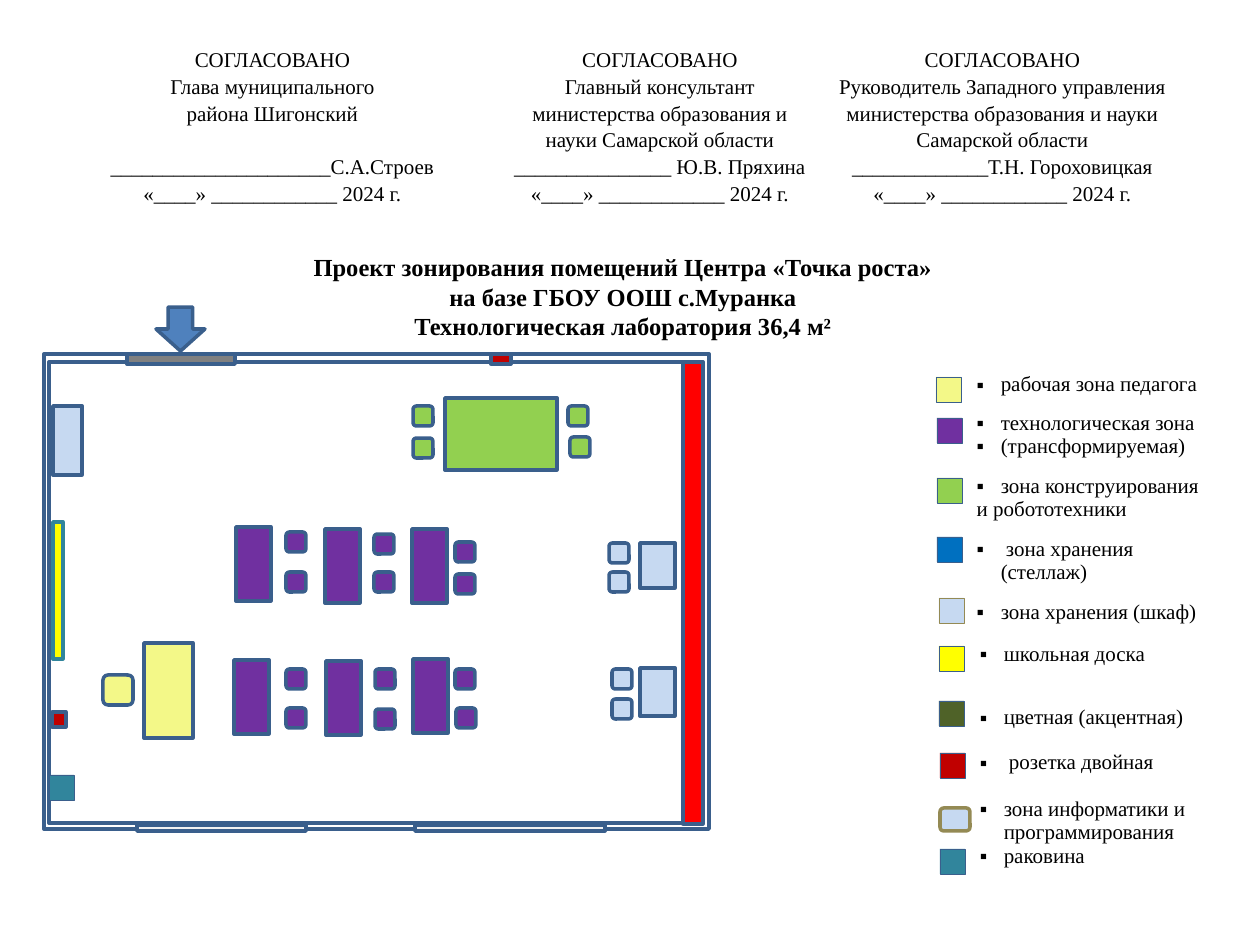
from dataclasses import dataclass
from itertools import accumulate
from typing import Optional

from lxml import etree
from pptx import Presentation
from pptx import util as u
from pptx.dml.color import RGBColor
from pptx.enum import shapes, text
from pptx.oxml import ns

PX_PER_INCH = 126
RECT = shapes.MSO_SHAPE.RECTANGLE
ROUND = shapes.MSO_SHAPE.ROUNDED_RECTANGLE
ARROW = shapes.MSO_SHAPE.DOWN_ARROW
CENTER = text.PP_ALIGN.CENTER
LEFT = text.PP_ALIGN.LEFT


@dataclass(frozen=True)
class Theme:
    font: str = "Times New Roman"
    title_size: float = 14
    body_size: float = 12
    ink: str = "000000"
    paper: str = "FFFFFF"
    outline: str = "3A5F8C"
    khaki: str = "948A54"
    teacher: str = "F3F888"
    technology: str = "7030A0"
    robotics: str = "92D050"
    shelving: str = "0070C0"
    cabinet: str = "C6D9F1"
    board: str = "FFFF00"
    accent: str = "4F6228"
    socket: str = "C00000"
    sink: str = "31859C"
    red_wall: str = "FF0000"
    door: str = "808080"
    window: str = "F2F2F2"
    arrow: str = "4F81BD"
    thin: float = 0.25
    medium: float = 2
    wall: float = 2.25


THEME = Theme()


@dataclass(frozen=True)
class Item:
    """One outlined shape of the plan or the legend, in px."""
    x: int
    y: int
    w: int
    h: int
    fill: Optional[str]
    form: int = RECT
    line: str = THEME.outline
    weight: float = THEME.medium


@dataclass(frozen=True)
class Line:
    """One paragraph of a table cell."""
    words: str
    bullet: bool = False
    before: float = 0


def px(n: int) -> int:
    return u.Emu(round(n * u.Inches(1) / PX_PER_INCH))


def swatch(x: int, y: int, fill: str, line: str = THEME.outline) -> Item:
    return Item(x, y, 25, 25, fill, RECT, line, THEME.thin)


def chair(x: int, y: int, fill: str) -> Item:
    return Item(x, y, 20, 20, fill, ROUND)


def draw_item(slide, item: Item) -> None:
    shape = slide.shapes.add_shape(item.form, *map(px, (item.x, item.y, item.w, item.h)))
    shape.shadow.inherit = False
    if item.fill:
        shape.fill.solid()
        shape.fill.fore_color.rgb = RGBColor.from_string(item.fill)
    else:
        shape.fill.background()
    shape.line.color.rgb = RGBColor.from_string(item.line)
    shape.line.width = u.Pt(item.weight)


def format_font(font, size: float, bold: bool = False) -> None:
    for key, value in {"name": THEME.font, "size": u.Pt(size), "bold": bold}.items():
        setattr(font, key, value)
    font.color.rgb = RGBColor.from_string(THEME.ink)


def add_bullet(paragraph) -> None:
    props = paragraph._p.get_or_add_pPr()
    indent = px(24)
    props.set("marL", str(indent))
    props.set("indent", str(-indent))
    etree.SubElement(props, ns.qn("a:buFont"), typeface=THEME.font)
    etree.SubElement(props, ns.qn("a:buChar"), char="▪")


def fill_cell(cell, lines: list[Line], align: int, spacing: float) -> None:
    cell.fill.background()
    frame = cell.text_frame
    if not lines:
        # A small end mark keeps an empty cell from stretching its row
        etree.SubElement(frame.paragraphs[0]._p, ns.qn("a:endParaRPr"), sz="1200")
    for i, line in enumerate(lines):
        paragraph = frame.add_paragraph() if i else frame.paragraphs[0]
        layout = {"alignment": align, "line_spacing": spacing,
                  "space_before": u.Pt(line.before)}
        for key, value in layout.items():
            setattr(paragraph, key, value)
        run = paragraph.add_run()
        run.text = line.words
        format_font(run.font, THEME.body_size)
        if line.bullet:
            add_bullet(paragraph)


def draw_table(slide, x: int, y: int, widths: list[int], heights: list[int],
               cells: list[list[list[Line]]], align: int = LEFT,
               spacing: float = 1.0) -> None:
    table = slide.shapes.add_table(len(heights), len(widths), px(x), px(y),
                                   px(sum(widths)), px(sum(heights))).table
    table.first_row = table.horz_banding = False
    for column, width in zip(table.columns, widths):
        column.width = px(width)
    for row, height, contents in zip(table.rows, heights, cells):
        row.height = px(height)
        for cell, lines in zip(row.cells, contents):
            fill_cell(cell, lines, align, spacing)


def draw_title(slide) -> None:
    title = slide.shapes.title
    box = {"left": 96, "top": 246, "width": 1054, "height": 102}
    for key, value in box.items():
        setattr(title, key, px(value))
    frame = title.text_frame
    frame.text = ("Проект зонирования помещений Центра «Точка роста»\n"
                  "на базе ГБОУ ООШ с.Муранка\n"
                  "Технологическая лаборатория 36,4 м²")
    settings = {"word_wrap": True, "auto_size": text.MSO_AUTO_SIZE.NONE,
                "vertical_anchor": text.MSO_ANCHOR.TOP}
    for key, value in settings.items():
        setattr(frame, key, value)
    for paragraph in frame.paragraphs:
        paragraph.alignment = CENTER
        format_font(paragraph.runs[0].font, THEME.title_size, bold=True)


def draw_approvals(slide) -> None:
    approvals = [
        (["Глава муниципального", "района Шигонский"],
         "_____________________С.А.Строев", 15.3),
        (["Главный консультант министерства образования и науки Самарской области"],
         "_______________ Ю.В. Пряхина", 0),
        (["Руководитель Западного управления министерства образования и науки "
          "Самарской области"], "_____________Т.Н. Гороховицкая", 0),
    ]
    cells = [[Line("СОГЛАСОВАНО"), *map(Line, post), Line(signature, before=gap),
              Line("«____» ____________ 2024 г.")] for post, signature, gap in approvals]
    draw_table(slide, 49, 39, [447, 328, 357], [215], [cells], CENTER, 1.15)


def draw_legend(slide) -> None:
    zones = [[Line("рабочая зона педагога", True)],
             [Line("технологическая зона", True), Line("(трансформируемая)", True)],
             [Line("зона конструирования", True), Line("и робототехники")],
             [Line(" зона хранения (стеллаж)", True)],
             [Line("зона хранения (шкаф)", True)]]
    fittings = [[Line("школьная доска", True)],
                [Line("цветная (акцентная)", True)],
                [Line(" розетка двойная", True),
                 Line("зона информатики и программирования", True, 13.3),
                 Line("раковина", True)],
                []]
    columns = [29, 260]
    for x, y, heights, entries in ((934, 367, [37, 63, 63, 63, 42], zones),
                                   (937, 636, [64, 45, 140, 40], fittings)):
        draw_table(slide, x, y, columns, heights, [[[], entry] for entry in entries])
    t = THEME
    for item in (swatch(936, 377, t.teacher), swatch(937, 418, t.technology),
                 swatch(937, 478, t.robotics), swatch(937, 537, t.shelving),
                 swatch(939, 598, t.cabinet, t.khaki), swatch(939, 646, t.board),
                 swatch(939, 701, t.accent), swatch(940, 753, t.socket),
                 Item(940, 808, 30, 23, t.cabinet, ROUND, t.khaki),
                 swatch(940, 849, t.sink)):
        draw_item(slide, item)


def draw_room(slide) -> None:
    t = THEME
    items = [
        # Walls, entrance, windows and fittings
        Item(44, 354, 665, 475, None, weight=t.wall),
        Item(49, 362, 653, 461, None, weight=t.wall),
        Item(683, 362, 20, 462, t.red_wall),
        Item(156, 307, 49, 44, t.arrow, ARROW),
        Item(127, 354, 108, 10, t.door, weight=t.wall),
        Item(137, 825, 169, 6, t.window), Item(415, 825, 190, 6, t.window),
        Item(491, 354, 20, 10, t.socket), Item(52, 712, 14, 15, t.socket),
        Item(53, 522, 10, 137, t.board, line=t.sink),
        swatch(49, 775, t.sink),
        # Teacher's place and cabinet
        Item(144, 643, 49, 95, t.teacher), Item(103, 675, 30, 30, t.teacher, ROUND),
        Item(53, 406, 29, 69, t.cabinet),
        # Robotics table and computer desks
        Item(445, 398, 112, 72, t.robotics),
        Item(640, 543, 35, 45, t.cabinet), Item(640, 668, 35, 48, t.cabinet),
    ]
    # Technology desks
    desks = [(236, 527), (325, 529), (412, 529), (234, 660), (326, 661), (413, 659)]
    items += [Item(x, y, 35, 74, t.technology) for x, y in desks]
    # Chairs of each zone
    chairs = {
        t.technology: [(286, 532), (286, 572), (374, 534), (374, 572), (455, 542),
                       (455, 574), (286, 669), (286, 708), (375, 669), (375, 709),
                       (455, 669), (456, 708)],
        t.cabinet: [(609, 543), (609, 572), (612, 669), (612, 699)],
        t.robotics: [(413, 406), (413, 438), (568, 406), (570, 437)],
    }
    items += [chair(x, y, fill) for fill, seats in chairs.items() for x, y in seats]
    for item in items:
        draw_item(slide, item)


def main() -> None:
    deck = Presentation()
    deck.slide_width, deck.slide_height = u.Inches(10), u.Inches(7.5)
    slide = deck.slides.add_slide(deck.slide_layouts[5])
    draw_title(slide)
    draw_legend(slide)
    draw_room(slide)
    draw_approvals(slide)
    deck.save("out.pptx")


if __name__ == "__main__":
    main()
